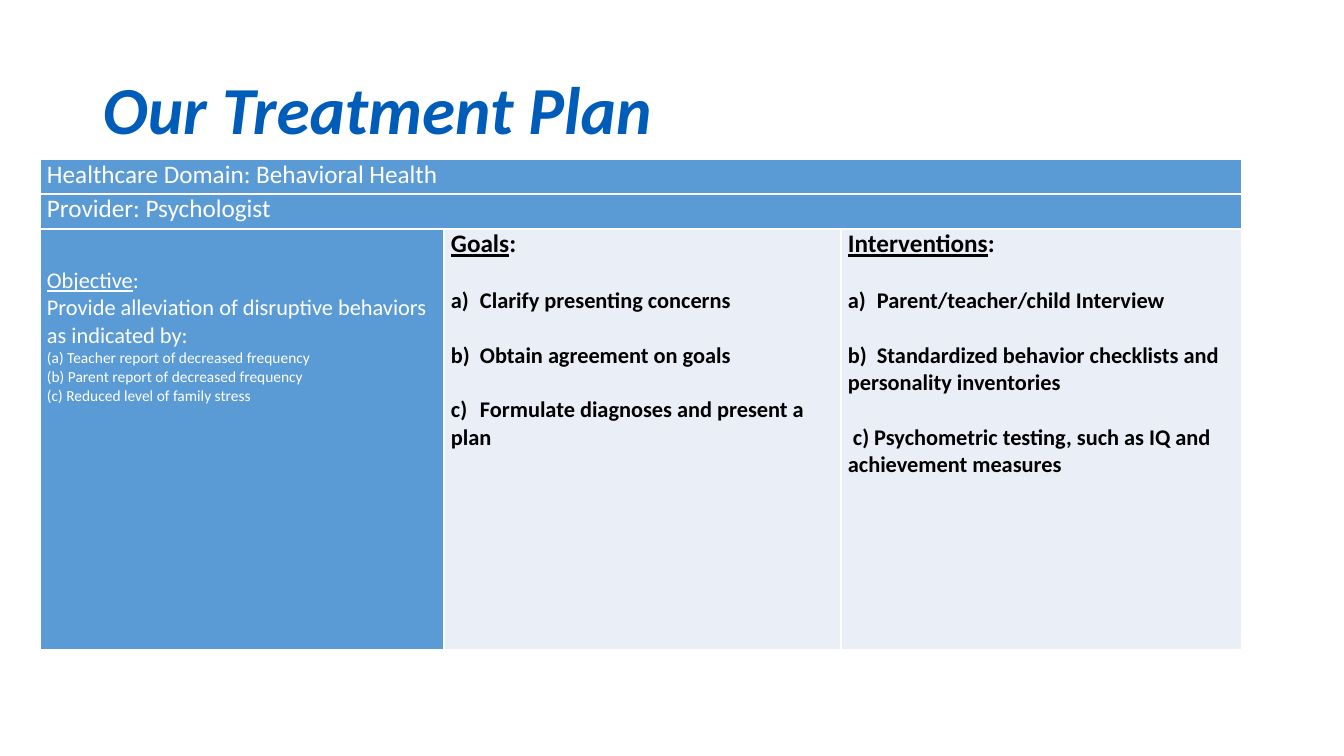
import pptx
import pptx.util
import pptx.dml.color
import pptx.enum.text
import pptx.oxml
import pptx.oxml.ns

# Content: each line is (runs, size, gap before in pt); a run is (text, underlined)
TITLE = "Our Treatment Plan"
BANNERS = ["Healthcare Domain: Behavioral Health", "Provider: Psychologist"]
OBJECTIVE = [
    ([("Objective", True), (":", False)], 16, 0),
    ([("Provide alleviation of disruptive behaviors as indicated by:", False)], 16, 0),
    ([("(a) Teacher report of decreased frequency", False)], 11, 0),
    ([("(b) Parent report of decreased frequency", False)], 11, 0),
    ([("(c) Reduced level of family stress", False)], 11, 0),
]
PLANS = [
    ("Goals", [
        "a)\tClarify presenting concerns",
        "b)\tObtain agreement on goals",
        "c)\tFormulate diagnoses and present a plan",
    ]),
    ("Interventions", [
        "a)\tParent/teacher/child Interview",
        "b)\tStandardized behavior checklists and personality inventories",
        "c) Psychometric testing, such as IQ and achievement measures",
    ]),
]

COLORS = {"title": "005CB9", "header": "5B9BD5", "body": "EAEFF7",
          "white": "FFFFFF", "black": "000000"}
FONT = "Calibri"
PX = 914400 / 100.8

# Layout in px
SLIDE = (1344, 756)
TITLE_BOX = (93, 40, 1159, 146)
TABLE_ORIGIN = (40, 159)
COLUMNS = [404, 397, 401]
ROWS = [35, 35, 421]
CELL_MARGIN = 7
OBJECTIVE_TOP = 38
LABEL_TAB = 29
PLAN_INDENT = 5
PLAN_GAP = 19.5


def px(length):
    return pptx.util.Emu(round(length * PX))


def color(name):
    return pptx.dml.color.RGBColor.from_string(COLORS[name])


def add_run(paragraph, text, size, ink, bold=False, italic=False, underline=False):
    run = paragraph.add_run()
    run.text = text
    font = run.font
    font.name, font.size = FONT, pptx.util.Pt(size)
    font.bold, font.italic, font.underline = bold, italic, underline
    font.color.rgb = color(ink)


def set_label_spacing(paragraph, text):
    """Align the text after a tabbed label, or indent an untabbed label."""
    properties = paragraph._p.get_or_add_pPr()
    if "\t" in text:
        properties.append(pptx.oxml.parse_xml(
            f'<a:tabLst {pptx.oxml.ns.nsdecls("a")}>'
            f'<a:tab pos="{px(LABEL_TAB)}" algn="l"/></a:tabLst>'))
    else:
        properties.set("marL", "0")
        properties.set("indent", str(px(PLAN_INDENT)))


def fill_cell(cell, lines, fill, ink, bold=False, top=0):
    cell.margin_left = cell.margin_right = px(CELL_MARGIN)
    cell.margin_top, cell.margin_bottom = px(top), 0
    for number, (runs, size, gap) in enumerate(lines):
        frame = cell.text_frame
        paragraph = frame.add_paragraph() if number else frame.paragraphs[0]
        if gap:
            paragraph.space_before = pptx.util.Pt(gap)
            set_label_spacing(paragraph, runs[0][0])
        for text, underline in runs:
            add_run(paragraph, text, size, ink, bold, underline=underline)
    paint_cell(cell, fill)


def paint_cell(cell, fill):
    properties = cell._tc.get_or_add_tcPr()
    for side in ("lnL", "lnR", "lnT", "lnB"):
        properties.append(pptx.oxml.parse_xml(
            f'<a:{side} {pptx.oxml.ns.nsdecls("a")} w="{pptx.util.Pt(1)}">'
            f'<a:solidFill><a:srgbClr val="{COLORS["white"]}"/></a:solidFill></a:{side}>'))
    cell.fill.solid()
    cell.fill.fore_color.rgb = color(fill)


def main():
    deck = pptx.Presentation()
    deck.slide_width, deck.slide_height = map(px, SLIDE)
    slide = deck.slides.add_slide(deck.slide_layouts[6])

    # Title
    heading = slide.shapes.add_textbox(*map(px, TITLE_BOX)).text_frame
    heading.word_wrap = True
    heading.vertical_anchor = pptx.enum.text.MSO_ANCHOR.MIDDLE
    heading.paragraphs[0].line_spacing = 0.9
    add_run(heading.paragraphs[0], TITLE, 48, "title", bold=True, italic=True)

    # Table grid
    plan = slide.shapes.add_table(
        len(ROWS), len(COLUMNS), *map(px, TABLE_ORIGIN),
        px(sum(COLUMNS)), px(sum(ROWS))).table
    plan.first_row = plan.horz_banding = False
    for column, width in zip(plan.columns, COLUMNS):
        column.width = px(width)
    for row, height in zip(plan.rows, ROWS):
        row.height = px(height)

    # Banner rows across all columns
    for row, banner in enumerate(BANNERS):
        plan.cell(row, 0).merge(plan.cell(row, len(COLUMNS) - 1))
        fill_cell(plan.cell(row, 0), [([(banner, False)], 18, 0)], "header", "white")
        for column in range(1, len(COLUMNS)):
            paint_cell(plan.cell(row, column), "header")

    # Objective, then goals and interventions
    body_row = len(BANNERS)
    fill_cell(plan.cell(body_row, 0), OBJECTIVE, "header", "white", top=OBJECTIVE_TOP)
    for column, (name, items) in enumerate(PLANS, start=1):
        lines = [([(name, True), (":", False)], 18, 0)]
        lines += [([(item, False)], 16, PLAN_GAP) for item in items]
        fill_cell(plan.cell(body_row, column), lines, "body", "black", bold=True)

    deck.save("out.pptx")


if __name__ == "__main__":
    main()
